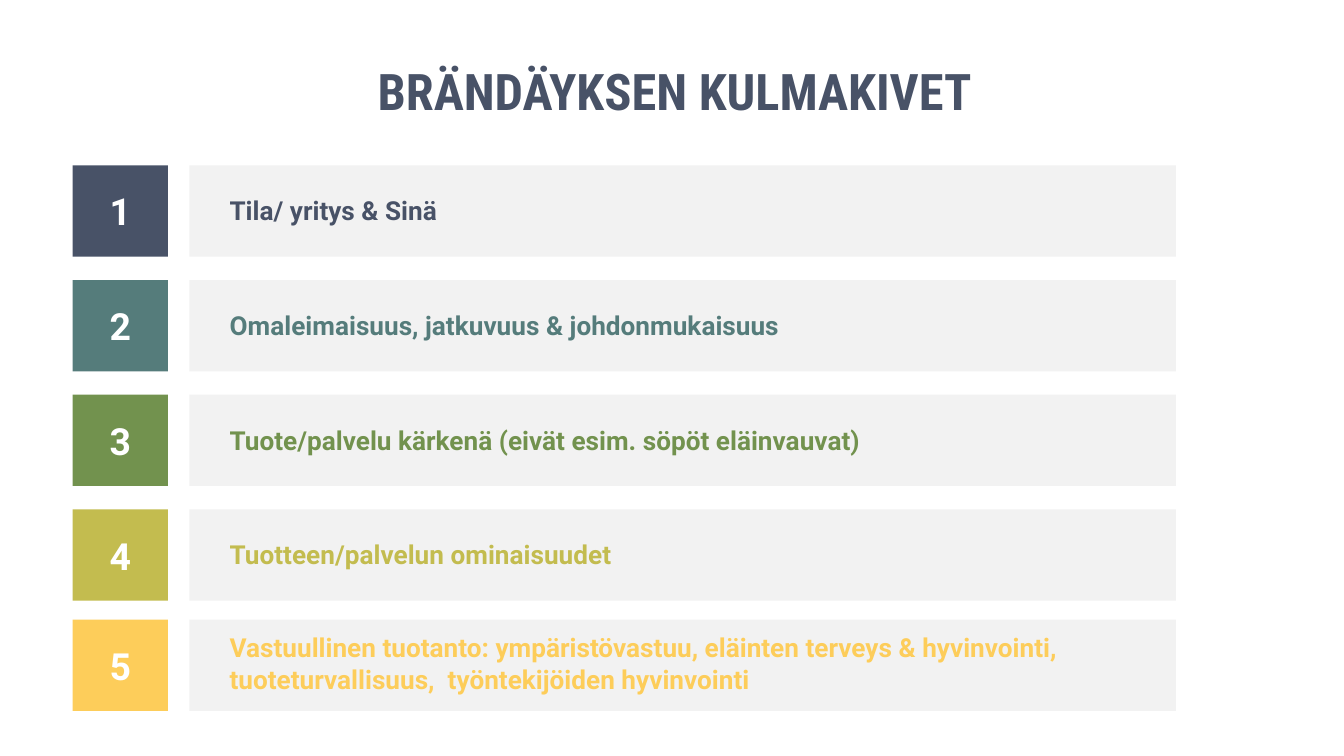
from pptx import Presentation
from pptx.dml.color import RGBColor
from pptx.enum.shapes import MSO_SHAPE
from pptx.enum.text import MSO_ANCHOR, MSO_AUTO_SIZE, PP_ALIGN
from pptx.util import Inches, Pt

NAVY, PALE, WHITE = "485267", "F2F2F2", "FFFFFF"
LEFT, TOP, FOURTH_TOP, LAST_TOP = 0.54, 1.23, 3.79, 4.61
PITCH = (FOURTH_TOP - TOP) / 3
BADGE_WIDTH, ROW_HEIGHT = 0.71, 0.68
BAR_LEFT, BAR_WIDTH, LABEL_INDENT = 1.41, 7.34, 0.2
LABEL_WIDTH = BAR_WIDTH - LABEL_INDENT
ROWS = [
    (NAVY, 1.76, ["Tila/ yritys & Sinä"]),
    ("557C7B", 4.33, ["Omaleimaisuus, jatkuvuus & johdonmukaisuus"]),
    ("72924E", LABEL_WIDTH, ["Tuote/palvelu kärkenä (eivät esim. söpöt eläinvauvat)"]),
    ("C3BC4F", 3.08, ["Tuotteen/palvelun ominaisuudet"]),
    ("FDCD5A", 6.49, ["Vastuullinen tuotanto: ympäristövastuu, eläinten terveys & hyvinvointi,",
                      "tuoteturvallisuus,  työntekijöiden hyvinvointi"]),
]


def color(value):
    """Turn a hex string into a colour."""
    return RGBColor.from_string(value)


def write(frame, lines, size, ink, align, font="Roboto"):
    """Fill a text frame with bold paragraphs."""
    frame.text = "\n".join(lines)
    for para in frame.paragraphs:
        para.alignment = align
        para.font.name = font
        para.font.size = Pt(size)
        para.font.bold = True
        para.font.color.rgb = color(ink)


def add_block(page, left, top, width, fill):
    """Add a plain filled rectangle of row height."""
    block = page.shapes.add_shape(MSO_SHAPE.RECTANGLE, Inches(left), Inches(top),
                                  Inches(width), Inches(ROW_HEIGHT))
    block.shadow.inherit = False
    block.fill.solid()
    block.fill.fore_color.rgb = color(fill)
    block.line.fill.background()
    return block


def add_text(page, left, top, width, height, wrap=True):
    """Add a text box that grows with its text and return its frame."""
    box = page.shapes.add_textbox(Inches(left), Inches(top), Inches(width), Inches(height))
    frame = box.text_frame
    frame.word_wrap = wrap
    frame.auto_size = MSO_AUTO_SIZE.SHAPE_TO_FIT_TEXT
    return frame


def add_row(page, number, top, ink, width, lines):
    """Add a numbered badge beside a labelled bar."""
    add_block(page, BAR_LEFT, top, BAR_WIDTH, PALE)
    extra = len(lines) - 1
    label = add_text(page, BAR_LEFT + LABEL_INDENT, top + 0.17 - 0.13 * extra,
                     width, 0.34 + 0.23 * extra, wrap=width == LABEL_WIDTH)
    write(label, lines, 14, ink, PP_ALIGN.LEFT)
    badge = add_block(page, LEFT, top, BADGE_WIDTH, ink).text_frame
    badge.vertical_anchor = MSO_ANCHOR.MIDDLE
    write(badge, [str(number)], 20, WHITE, PP_ALIGN.CENTER)


def main():
    """Build the slide and save the deck."""
    deck = Presentation()
    deck.slide_width = Inches(10)
    deck.slide_height = deck.slide_width * 9 // 16
    page = deck.slides.add_slide(deck.slide_layouts[6])
    title = add_text(page, LEFT, 0.4, 8.96, 0.56)
    write(title, ["BRÄNDÄYKSEN KULMAKIVET"], 27, NAVY, PP_ALIGN.CENTER, "Roboto Condensed")
    for index, (ink, width, lines) in enumerate(ROWS):
        top = min(TOP + index * PITCH, LAST_TOP)
        add_row(page, index + 1, top, ink, width, lines)
    deck.save("out.pptx")


if __name__ == "__main__":
    main()
